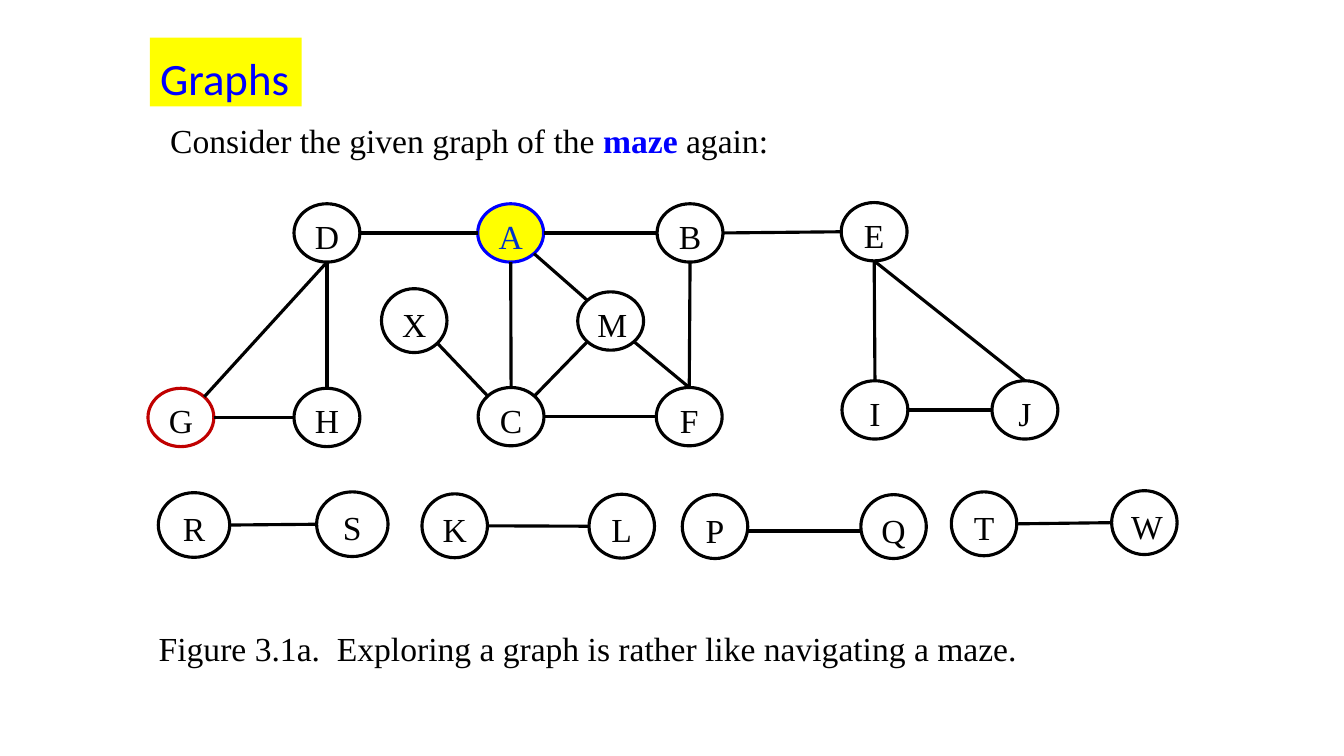
from pptx import Presentation
from pptx.dml.color import RGBColor
from pptx.enum.shapes import MSO_CONNECTOR, MSO_SHAPE
from pptx.enum.text import MSO_ANCHOR, MSO_AUTO_SIZE, PP_ALIGN
from pptx.oxml.ns import qn
from pptx.util import Cm, Pt
from lxml import etree

OVAL = MSO_SHAPE.OVAL
STRAIGHT = MSO_CONNECTOR.STRAIGHT
TOP, MIDDLE = MSO_ANCHOR.TOP, MSO_ANCHOR.MIDDLE
LEFT, CENTER = PP_ALIGN.LEFT, PP_ALIGN.CENTER
GROW, FIXED = MSO_AUTO_SIZE.SHAPE_TO_FIT_TEXT, MSO_AUTO_SIZE.NONE

BLACK = RGBColor(0x00, 0x00, 0x00)
WHITE = RGBColor(0xFF, 0xFF, 0xFF)
YELLOW = RGBColor(0xFF, 0xFF, 0x00)
BLUE = RGBColor(0x00, 0x00, 0xFF)
LETTER_BLUE = RGBColor(0x00, 0x33, 0xCC)
RED = RGBColor(0xC0, 0x00, 0x00)

# Node sizes in cm: (width, height)
FLAT, ROUND, WIDE = (1.66, 1.47), (1.65, 1.61), (1.8, 1.63)

# Node: centre x, centre y (cm), size
NODES = {
    "D": (8.24, 5.87, FLAT), "A": (12.87, 5.87, FLAT),
    "B": (17.39, 5.87, FLAT), "E": (22.03, 5.84, FLAT),
    "X": (10.44, 8.08, ROUND), "M": (15.39, 8.09, FLAT),
    "G": (4.56, 10.52, FLAT), "H": (8.24, 10.52, FLAT),
    "C": (12.88, 10.5, FLAT), "F": (17.37, 10.5, FLAT),
    "I": (22.05, 10.33, FLAT), "J": (25.83, 10.33, FLAT),
    "R": (4.89, 13.23, WIDE), "S": (8.88, 13.21, WIDE),
    "K": (11.46, 13.25, ROUND), "L": (15.67, 13.26, ROUND),
    "P": (18.02, 13.27, ROUND), "Q": (22.52, 13.27, ROUND),
    "T": (24.8, 13.2, ROUND), "W": (28.84, 13.17, ROUND),
}
# Fill, outline and letter colour of the marked nodes
MARKED = {"A": (YELLOW, BLUE, LETTER_BLUE), "G": (WHITE, RED, BLACK)}
PLAIN = (WHITE, BLACK, BLACK)

# Points on an ellipse, as fractions of its half width and half height
SITES = {"n": (0, -1), "s": (0, 1), "w": (-1, 0), "e": (1, 0),
         "nw": (-0.71, -0.71), "ne": (0.71, -0.71),
         "sw": (-0.71, 0.71), "se": (0.71, 0.71)}

# Edges grouped by the sites they leave from and arrive at
EDGES = {
    ("e", "w"): ["DA", "AB", "BE", "GH", "CF", "IJ", "RS", "KL", "PQ", "TW"],
    ("s", "n"): ["DH", "AC", "BF", "EI", "EJ"],
    ("s", "ne"): ["DG"],
    ("se", "nw"): ["AM", "XC"],
    ("sw", "ne"): ["MC"],
    ("se", "n"): ["MF"],
}
LOWERED = {"PQ": 0.11}  # edges drawn below the centre line, in cm


class GraphSlide:
    serif, sans = "Times New Roman", "Calibri"
    text_size, title_size, line_width = Pt(24), Pt(32), Pt(2.25)

    def __init__(self, deck):
        self.page = deck.slides.add_slide(deck.slide_layouts[5])

    def style_span(self, span, color, size=text_size, font=serif, bold=False):
        span.font.name, span.font.size = font, size
        span.font.bold, span.font.color.rgb = bold, color

    def title(self, text, left, top, width, height):
        box = self.page.shapes.title
        box.left, box.top, box.width, box.height = map(Cm, (left, top, width, height))
        box.fill.solid()
        box.fill.fore_color.rgb = YELLOW
        frame = box.text_frame
        frame.text = text
        frame.word_wrap, frame.auto_size, frame.vertical_anchor = False, FIXED, TOP
        para = frame.paragraphs[0]
        para.alignment, para.line_spacing = LEFT, 1.15
        self.style_span(para.runs[0], BLUE, self.title_size, self.sans)

    def sentence(self, parts, left, top, width, height):
        box = self.page.shapes.add_textbox(*map(Cm, (left, top, width, height)))
        frame = box.text_frame
        frame.word_wrap, frame.auto_size = True, GROW
        para = frame.paragraphs[0]
        para.line_spacing = 1.5
        for text, color, bold in parts:
            span = para.add_run()
            span.text = text
            self.style_span(span, color, bold=bold)

    def node(self, letter):
        x, y, (width, height) = NODES[letter]
        fill, outline, ink = MARKED.get(letter, PLAIN)
        oval = self.page.shapes.add_shape(
            OVAL, Cm(x - width / 2), Cm(y - height / 2), Cm(width), Cm(height))
        oval.shadow.inherit = False
        oval.fill.solid()
        oval.fill.fore_color.rgb = fill
        oval.line.color.rgb, oval.line.width = outline, self.line_width
        frame = oval.text_frame
        frame.text = letter
        frame.vertical_anchor = MIDDLE
        para = frame.paragraphs[0]
        para.alignment, para.line_spacing, para.space_after = CENTER, 1.15, Pt(10)
        self.style_span(para.runs[0], ink)

    def site(self, letter, side, drop):
        x, y, (width, height) = NODES[letter]
        across, down = SITES[side]
        return Cm(x + across * width / 2), Cm(y + down * height / 2 + drop)

    def edge(self, pair, sides):
        drop = LOWERED.get(pair, 0)
        start, end = (self.site(letter, side, drop) for letter, side in zip(pair, sides))
        line = self.page.shapes.add_connector(STRAIGHT, *start, *end)
        line.line.color.rgb, line.line.width = BLACK, self.line_width
        etree.SubElement(line._element.spPr, qn("a:effectLst"))


def main():
    deck = Presentation()
    deck.slide_width, deck.slide_height = Cm(33.87), Cm(19.05)
    slide = GraphSlide(deck)

    # Heading and introduction
    slide.title("Graphs", 3.78, 0.95, 3.82, 1.73)
    slide.sentence([("Consider the given graph of the ", BLACK, False),
                    ("maze", BLUE, True),
                    (" again:", BLACK, False)], 4.04, 2.4, 19.28, 1.67)

    # Graph
    for letter in NODES:
        slide.node(letter)
    for sides, pairs in EDGES.items():
        for pair in pairs:
            slide.edge(pair, sides)

    # Caption
    slide.sentence([("Figure 3.1a.  Exploring a graph is rather like navigating a maze.",
                     BLACK, False)], 3.75, 15.2, 22.9, 1.67)
    deck.save("out.pptx")


if __name__ == "__main__":
    main()
